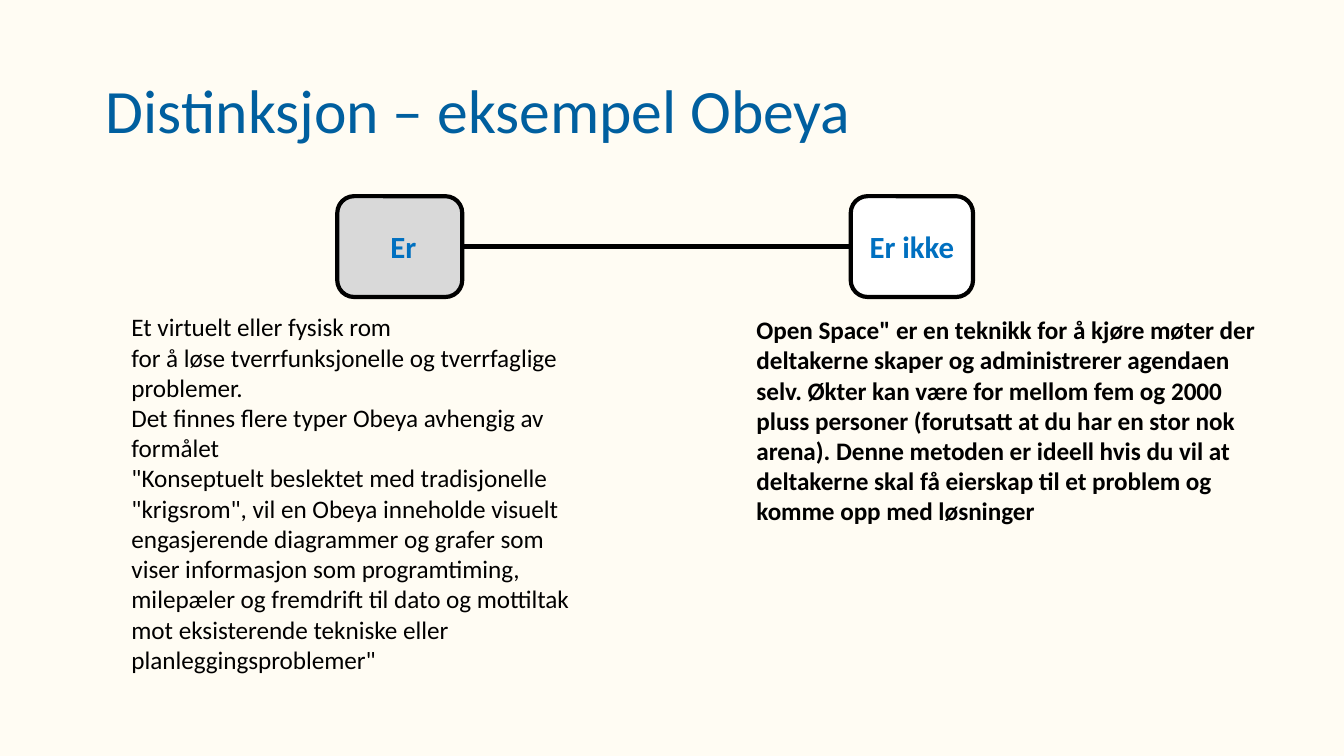
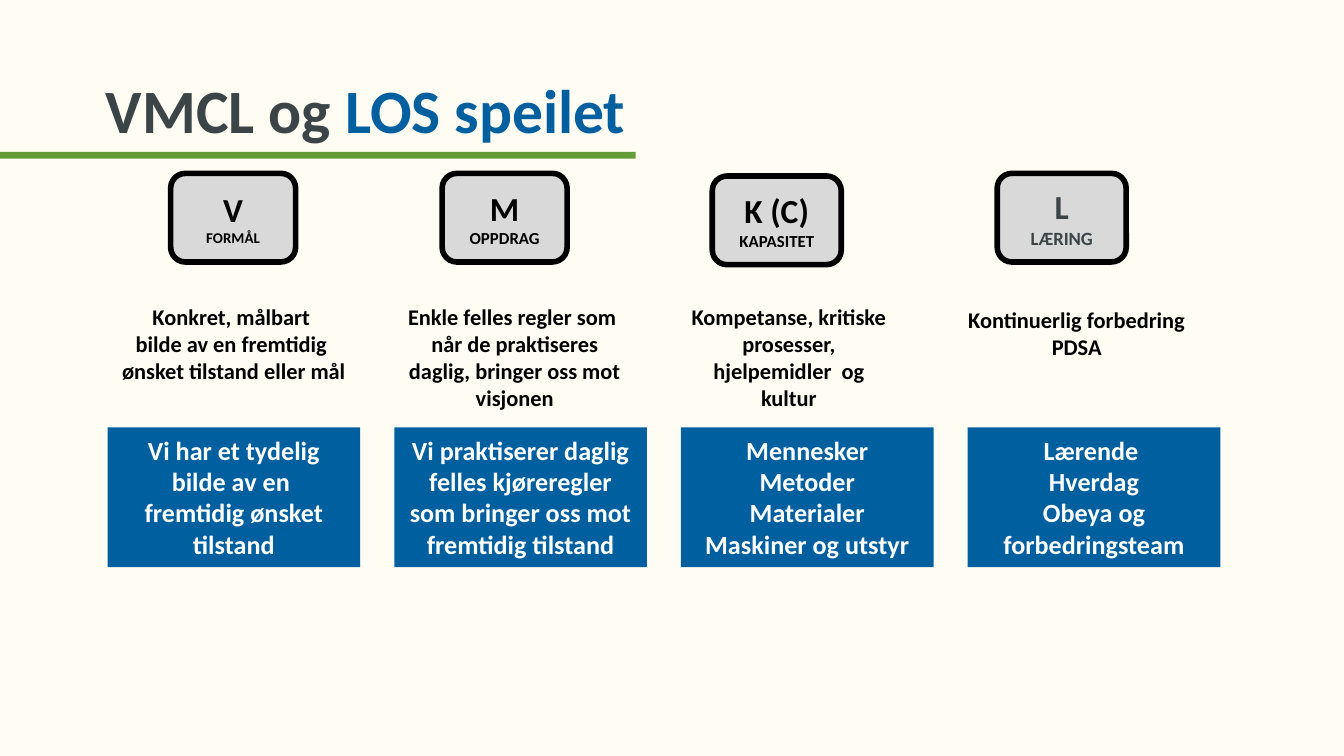
"""Builds two slides: the Obeya distinction and the VMCL mirror."""
import copy
import pptx
import pptx.util
import pptx.oxml.ns
import pptx.dml.color
import pptx.enum.shapes
import pptx.enum.text
import lxml.etree

Inches = pptx.util.Inches
Kind = pptx.enum.shapes.MSO_SHAPE
Align = pptx.enum.text.PP_ALIGN
Anchor = pptx.enum.text.MSO_ANCHOR
qn = pptx.oxml.ns.qn

BLUE, SLATE, GREEN, CREAM = "005F9F", "3B4446", "649D35", "FFFCF3"
BLACK, WHITE, GREY, SKY = "000000", "FFFFFF", "D9D9D9", "0070C0"


def tint(hue):
    return pptx.dml.color.RGBColor.from_string(hue)


def put(slide, spot, paras, font, para, frame, kind=None, fill=None, edge=0):
    spot = [Inches(n) for n in spot]
    if kind is None:
        box = slide.shapes.add_textbox(*spot)
    else:
        box = slide.shapes.add_shape(kind, *spot)
        box.shadow.inherit = False
        box.fill.solid()
        box.fill.fore_color.rgb = tint(fill)
        if edge:
            box.line.color.rgb = tint(BLACK)
            box.line.width = pptx.util.Pt(edge)
        else:
            box.line.fill.background()
    body = box.text_frame
    for name, value in {"word_wrap": True, **frame}.items():
        setattr(body, name, value)
    for i, runs in enumerate(paras):
        part = body.add_paragraph() if i else body.paragraphs[0]
        for name, value in para.items():
            setattr(part, name, value)
        for text, extra in runs:
            for j, line in enumerate(text.split("\n")):
                if j:
                    part.add_line_break()
                run = part.add_run()
                run.text = line
                look = {"name": "Calibri", "hue": BLACK, **font, **extra}
                run.font.color.rgb = tint(look.pop("hue"))
                look["size"] = pptx.util.Pt(look["size"])
                for name, value in look.items():
                    setattr(run.font, name, value)
        for gap in part._p.findall(qn("a:br")):
            gap.append(copy.deepcopy(part._p.find(qn("a:r")).find(qn("a:rPr"))))
    return box


deck = pptx.Presentation()
deck.slide_width = Inches(10)
deck.slide_height = deck.slide_width * 9 // 16

MID = {"alignment": Align.CENTER}
CORE = {"vertical_anchor": Anchor.MIDDLE}
TOP = {"vertical_anchor": Anchor.TOP}
TIGHT = {"margin_left": Inches(0.05), "margin_right": Inches(0.05),
         "margin_top": Inches(0.03), "margin_bottom": Inches(0.03)}

titles = [
    [("Distinksjon – eksempel Obeya", {"hue": BLUE})],
    [("VMCL og ", {"hue": SLATE, "bold": True}),
     ("LOS speilet", {"hue": BLUE, "bold": True})],
]
pages = []
for title in titles:
    page = deck.slides.add_slide(deck.slide_layouts[6])
    page.background.fill.solid()
    page.background.fill.fore_color.rgb = tint(CREAM)
    put(page, (0.69, 0.3, 8.62, 1.09), [title], {"size": 33},
        {"line_spacing": 0.9}, CORE)
    pages.append(page)
first, second = pages

label = {"size": 16.5, "hue": SKY, "bold": True}
yes = put(first, (2.51, 1.46, 0.93, 0.75), [[(" Er", {})]], label, MID, CORE,
          Kind.ROUNDED_RECTANGLE, GREY, 2.25)
no = put(first, (6.33, 1.46, 0.91, 0.75), [[("Er ikke", {})]], label, MID,
         {**CORE, **TIGHT}, Kind.ROUNDED_RECTANGLE, WHITE, 2.25)
link = first.shapes.add_connector(pptx.enum.shapes.MSO_CONNECTOR.STRAIGHT, 0, 0, 0, 0)
link.begin_connect(yes, 3)
link.end_connect(no, 1)
link.line.color.rgb = tint(BLACK)
link.line.width = pptx.util.Pt(2.25)
lxml.etree.SubElement(link.element.spPr, qn("a:effectLst"))

room = (
    "Et virtuelt eller fysisk rom\n"
    "for å løse tverrfunksjonelle og tverrfaglige problemer. \n"
    "Det finnes flere typer Obeya avhengig av formålet\n"
    "\"Konseptuelt beslektet med tradisjonelle \"krigsrom\", vil en Obeya "
    "inneholde visuelt engasjerende diagrammer og grafer som viser informasjon "
    "som programtiming, milepæler og fremdrift til dato og mottiltak mot "
    "eksisterende tekniske eller planleggingsproblemer\""
)
space = (
    "Open Space\" er en teknikk for å kjøre møter der deltakerne skaper og "
    "administrerer agendaen selv. Økter kan være for mellom fem og 2000 pluss "
    "personer (forutsatt at du har en stor nok arena). Denne metoden er ideell "
    "hvis du vil at deltakerne skal få eierskap til et problem og komme opp "
    "med løsninger"
)
for spot, text, bold in [((0.88, 2.27, 3.59, 3.05), room, False),
                         ((5.53, 2.29, 3.95, 1.92), space, True)]:
    put(first, spot, [[(text, {})]], {"size": 13.5, "bold": bold}, {}, TOP)

keys = [
    ("V", "FORMÅL", 8, BLACK, (1.27, 1.29, 0.93, 0.66)),
    ("M", "OPPDRAG", 9, BLACK, (3.29, 1.29, 0.93, 0.66)),
    ("L", "LÆRING", 10, SLATE, (7.42, 1.29, 0.96, 0.66)),
    ("K (C)", "KAPASITET", 9, BLACK, (5.3, 1.31, 0.96, 0.66)),
]
for sign, word, size, hue, spot in keys:
    put(second, spot, [[(sign, {})], [(word, {"size": size})]],
        {"size": 18, "hue": hue, "bold": True}, MID, CORE,
        Kind.ROUNDED_RECTANGLE, GREY, 3)

notes = [
    ((0.8, 2.21, 1.88, 0.71), False,
     ["Konkret, målbart ", "bilde av en fremtidig ", "ønsket tilstand eller mål"]),
    ((2.89, 2.21, 1.88, 0.91), True,
     ["Enkle felles regler som ",
      "når de praktiseres daglig, bringer oss mot visjonen"]),
    ((5, 2.21, 1.74, 0.91), True,
     ["Kompetanse, kritiske prosesser, hjelpemidler  og kultur"]),
    ((7.09, 2.23, 1.88, 0.71), False, ["Kontinuerlig forbedring ", "PDSA "]),
]
for spot, wrap, lines in notes:
    put(second, spot, [[(line, {})] for line in lines],
        {"size": 12, "bold": True}, MID, {**TOP, "word_wrap": wrap})

cards = [
    ["Vi har et tydelig bilde av en ", "fremtidig ønsket tilstand"],
    ["Vi praktiserer daglig felles kjøreregler som bringer oss mot "
     "fremtidig tilstand"],
    ["Mennesker", "Metoder", "Materialer", "Maskiner og utstyr"],
    ["Lærende ", "Hverdag", "Obeya og forbedringsteam"],
]
step = (7.2 - 0.8) / 3
for i, lines in enumerate(cards):
    put(second, (0.8 + i * step, 3.18, 1.88, 1.04),
        [[(line, {})] for line in lines],
        {"size": 14, "hue": WHITE, "bold": True}, MID, TOP, Kind.RECTANGLE, BLUE)

put(second, (0, 1.13, 4.73, 0.05), [], {}, {}, {}, Kind.RECTANGLE, GREEN)

deck.save("out.pptx")
